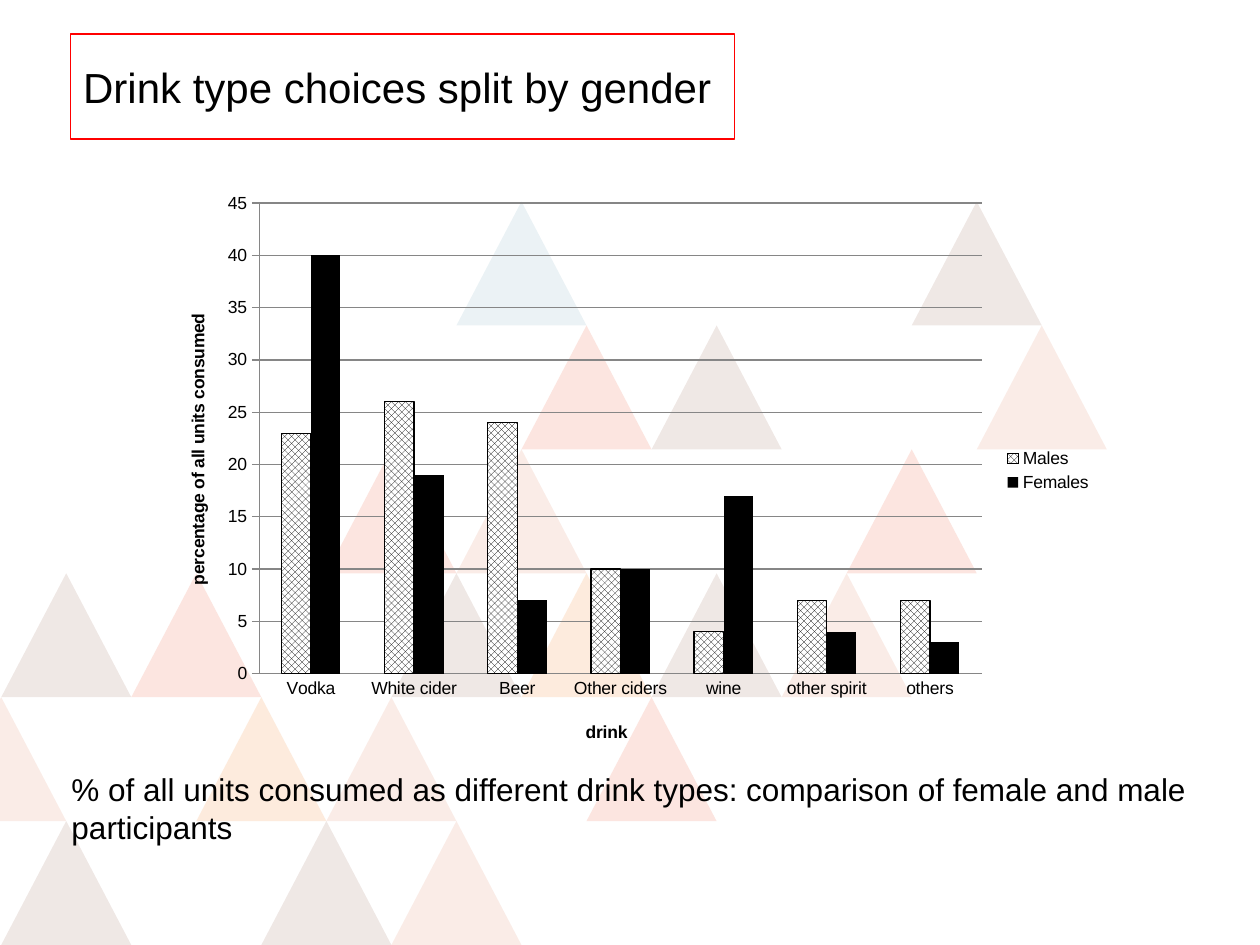
from lxml.etree import SubElement
from pptx import Presentation
from pptx.chart.data import CategoryChartData
from pptx.dml.color import RGBColor
from pptx.enum.chart import XL_CHART_TYPE, XL_LEGEND_POSITION, XL_TICK_MARK
from pptx.enum.dml import MSO_PATTERN
from pptx.enum.shapes import MSO_SHAPE
from pptx.enum.text import MSO_ANCHOR, MSO_AUTO_SIZE, PP_ALIGN
from pptx.oxml import parse_xml
from pptx.oxml.ns import nsdecls, qn
from pptx.util import Pt

FONT = "Arial"
BLACK, WHITE, RED, GRID = "000000", "FFFFFF", "FF0000", "868686"
TINTS = {
    "blue": ("3B88A5", 10),
    "brown": ("6A2100", 10),
    "coral": ("EF613F", 16),
    "rust": ("D54A19", 10),
    "orange": ("F37F21", 15),
}
TRIANGLE_ROWS = [
    {7: "blue", 14: "brown"},
    {8: "coral", 10: "brown", 15: "rust"},
    {5: "coral", 7: "rust", 13: "coral"},
    {0: "brown", 2: "coral", 6: "brown", 8: "orange", 10: "brown", 12: "rust"},
    {-1: "rust", 3: "orange", 5: "rust", 9: "coral"},
    {0: "brown", 4: "brown", 6: "rust"},
]
DRINKS = ["Vodka", "White cider", "Beer", "Other ciders", "wine", "other spirit", "others"]
SHARES = {
    "Males": [23, 26, 24, 10, 4, 7, 7],
    "Females": [40, 19, 7, 10, 17, 4, 3],
}


def color(value):
    return RGBColor.from_string(value)


def style_font(font, size, bold=False):
    font.name = FONT
    font.size = Pt(size)
    font.bold = bold
    font.color.rgb = color(BLACK)


def place(shape, left, top, width, height):
    shape.left, shape.top = Pt(left), Pt(top)
    shape.width, shape.height = Pt(width), Pt(height)


def write(box, text, size, anchor=MSO_ANCHOR.TOP):
    frame = box.text_frame
    frame.word_wrap = True
    frame.auto_size = MSO_AUTO_SIZE.SHAPE_TO_FIT_TEXT
    frame.vertical_anchor = anchor
    paragraph = frame.paragraphs[0]
    paragraph.alignment = PP_ALIGN.LEFT
    span = paragraph.add_run()
    span.text = text
    style_font(span.font, size)


def add_triangles(page, left, top, width, height):
    row_height = height / len(TRIANGLE_ROWS)
    half_base = width / 17
    for row, triangles in enumerate(TRIANGLE_ROWS):
        for column, tint in triangles.items():
            triangle = page.shapes.add_shape(
                MSO_SHAPE.ISOSCELES_TRIANGLE,
                Pt(left + column * half_base), Pt(top + row * row_height),
                Pt(2 * half_base), Pt(row_height))
            shade, opacity = TINTS[tint]
            triangle.shadow.inherit = False
            triangle.line.fill.background()
            triangle.fill.solid()
            triangle.fill.fore_color.rgb = color(shade)
            for node in triangle.element.spPr.iter(qn("a:srgbClr")):
                SubElement(node, qn("a:alpha")).set("val", str(opacity * 1000))


def set_layout(element, index, inner=False, **sizes):
    for old in element.findall(qn("c:layout")):
        element.remove(old)
    layout = parse_xml(f"<c:layout {nsdecls('c')}><c:manualLayout/></c:layout>")
    manual = layout[0]
    if inner:
        SubElement(manual, qn("c:layoutTarget")).set("val", "inner")
    for name in ("x", "y"):
        SubElement(manual, qn(f"c:{name}Mode")).set("val", "edge")
    for name, size in sizes.items():
        SubElement(manual, qn(f"c:{name}")).set("val", str(size))
    element.insert(index, layout)


def style_axis(axis, title, x, y):
    style_font(axis.tick_labels.font, 10)
    axis.format.line.color.rgb = color(GRID)
    axis.format.line.width = Pt(0.75)
    span = axis.axis_title.text_frame.paragraphs[0].add_run()
    span.text = title
    style_font(span.font, 10, bold=True)
    set_layout(axis.axis_title.element if hasattr(axis.axis_title, "element")
               else axis.axis_title._element, 1, x=x, y=y)


def style_series(plot):
    males, females = plot.series
    males.format.fill.patterned()
    males.format.fill.pattern = MSO_PATTERN.LARGE_CHECKER_BOARD
    males.format.fill.fore_color.rgb = color(BLACK)
    males.format.fill.back_color.rgb = color(WHITE)
    males.format.line.color.rgb = color(BLACK)
    males.format.line.width = Pt(0.75)
    females.format.fill.solid()
    females.format.fill.fore_color.rgb = color(BLACK)


def add_drink_chart(page, left, top, width, height):
    data = CategoryChartData()
    data.categories = DRINKS
    for name, values in SHARES.items():
        data.add_series(name, values)
    chart = page.shapes.add_chart(
        XL_CHART_TYPE.COLUMN_CLUSTERED,
        Pt(left), Pt(top), Pt(width), Pt(height), data).chart
    chart.has_title = False
    style_font(chart.font, 10)

    plot = chart.plots[0]
    plot.vary_by_categories = False
    plot.gap_width = 150
    plot.overlap = 0
    style_series(plot)

    style_axis(chart.category_axis, "drink", 0.45, 0.92)
    chart.category_axis.major_tick_mark = XL_TICK_MARK.NONE
    shares = chart.value_axis
    style_axis(shares, "percentage of all units consumed", 0.03, 0.22)
    shares.minimum_scale, shares.maximum_scale, shares.major_unit = 0, 45, 5
    shares.major_tick_mark = XL_TICK_MARK.OUTSIDE
    shares.has_major_gridlines = True
    shares.major_gridlines.format.line.color.rgb = color(GRID)
    shares.major_gridlines.format.line.width = Pt(0.75)

    chart.has_legend = True
    chart.legend.position = XL_LEGEND_POSITION.RIGHT
    chart.legend.include_in_layout = False
    style_font(chart.legend.font, 10)
    area = chart.element.find(".//" + qn("c:plotArea"))
    legend = chart.element.find(".//" + qn("c:legend"))
    set_layout(area, 0, inner=True, x=0.11, y=0.035, w=0.76, h=0.81)
    set_layout(legend, 1, x=0.89, y=0.45, w=0.1, h=0.09)


def add_title(page, left, top, width, height):
    title = page.shapes.title
    place(title, left, top, width, height)
    title.line.color.rgb = color(RED)
    title.line.width = Pt(1)
    write(title, "Drink type choices split by gender", 24, MSO_ANCHOR.MIDDLE)


def add_caption(page, left, top, width, height):
    box = page.shapes.add_textbox(Pt(left), Pt(top), Pt(width), Pt(height))
    write(box, "% of all units consumed as different drink types: "
               "comparison of female and male participants", 18)


def main():
    deck = Presentation()
    deck.slide_width, deck.slide_height = Pt(720), Pt(540)
    page = deck.slides.add_slide(deck.slide_layouts[5])
    page.background.fill.solid()
    page.background.fill.fore_color.rgb = color(WHITE)
    add_triangles(page, 0.7, 115.2, 631.8, 424.8)
    add_drink_chart(page, 88.5, 104.5, 543, 332)
    add_caption(page, 33.8, 436.5, 686.2, 50.4)
    add_title(page, 40.3, 31, 379.4, 36.7)
    deck.save("out.pptx")


if __name__ == "__main__":
    main()
